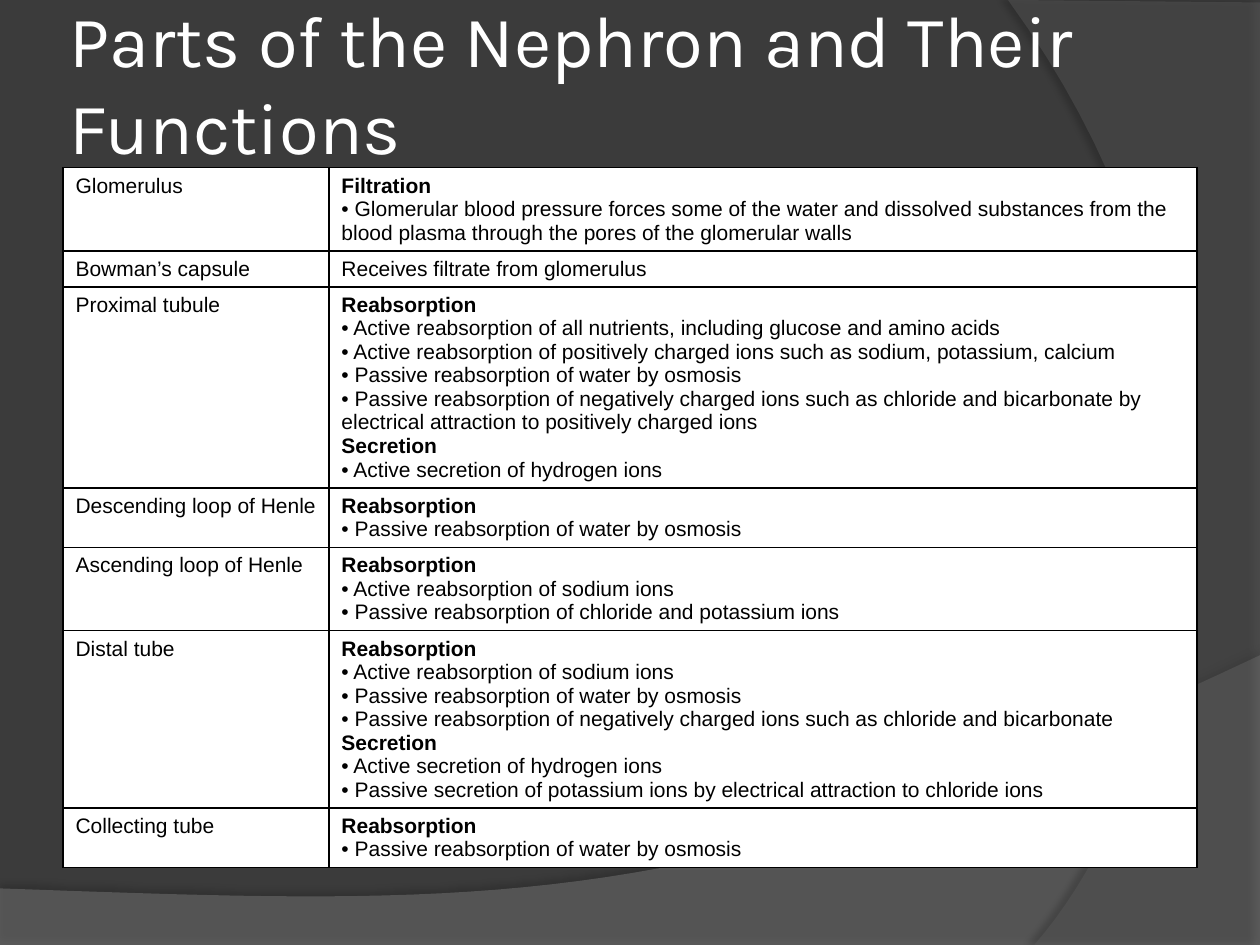
from dataclasses import dataclass

from lxml import etree
from pptx import Presentation
from pptx.dml.color import RGBColor
from pptx.enum.text import MSO_ANCHOR, MSO_AUTO_SIZE, PP_ALIGN
from pptx.oxml.ns import qn
from pptx.util import Cm, Pt

LEFT = PP_ALIGN.LEFT
MIDDLE = MSO_ANCHOR.MIDDLE
NO_AUTOFIT = MSO_AUTO_SIZE.NONE

BACKGROUND = RGBColor(0x3B, 0x3B, 0x3B)
WAVE_GREY = RGBColor(0x7F, 0x7F, 0x7F)
ARC_GREY = RGBColor(0x5E, 0x5E, 0x5E)
WHITE = RGBColor(0xFF, 0xFF, 0xFF)
BLACK = RGBColor(0x00, 0x00, 0x00)

TITLE_ONLY = 5
COLUMN_WIDTHS = (5.36, 17.5)
BULLET = "• "
CURVE_STEPS = 40

Point = tuple[float, float]


@dataclass
class Swoosh:
    """A translucent outline: straight corners, then one Bézier curve."""
    corners: list[Point]
    controls: tuple[Point, Point]
    end: Point
    color: RGBColor
    opacity: int
    shadow_opacity: int
    shadow_distance: float
    shadow_angle: int


@dataclass
class NephronPart:
    name: str
    height: float
    functions: list[str]


SWOOSHES = [
    Swoosh([(0, 17.91), (0, 19.05), (25.4, 19.05), (25.4, 13.21)],
           ((14.2, 18.52), (9.93, 18.26)), (0, 17.91), WAVE_GREY, 45, 35, 3.5, 270),
    Swoosh([(25.4, 0.05), (25.4, 19.05), (20.85, 19.05)],
           ((23.75, 15.72), (25.86, 7.62)), (20.32, 0), ARC_GREY, 40, 45, 4, 180),
]

# Lines that start with a bullet are plain; headings are bold
PARTS = [
    NephronPart("Glomerulus", 1.57, [
        "Filtration",
        "• Glomerular blood pressure forces some of the water and dissolved "
        "substances from the blood plasma through the pores of the glomerular walls"]),
    NephronPart("Bowman’s capsule", 0.69, ["Receives filtrate from glomerulus"]),
    NephronPart("Proximal tubule", 3.4, [
        "Reabsorption",
        "• Active reabsorption of all nutrients, including glucose and amino acids",
        "• Active reabsorption of positively charged ions such as sodium, potassium, calcium",
        "• Passive reabsorption of water by osmosis",
        "• Passive reabsorption of negatively charged ions such as chloride and "
        "bicarbonate by electrical attraction to positively charged ions",
        "Secretion",
        "• Active secretion of hydrogen ions"]),
    NephronPart("Descending loop of Henle", 1.14, [
        "Reabsorption",
        "• Passive reabsorption of water by osmosis"]),
    NephronPart("Ascending loop of Henle", 1.6, [
        "Reabsorption",
        "• Active reabsorption of sodium ions",
        "• Passive reabsorption of chloride and potassium ions"]),
    NephronPart("Distal tube", 3.4, [
        "Reabsorption",
        "• Active reabsorption of sodium ions",
        "• Passive reabsorption of water by osmosis",
        "• Passive reabsorption of negatively charged ions such as chloride and bicarbonate",
        "Secretion",
        "• Active secretion of hydrogen ions",
        "• Passive secretion of potassium ions by electrical attraction to chloride ions"]),
    NephronPart("Collecting tube", 1.14, [
        "Reabsorption",
        "• Passive reabsorption of water by osmosis"]),
]


def write_text(para, text: str, *, font: str = "Arial", size: float = 12,
               color: RGBColor = BLACK, bold: bool = False) -> None:
    para.alignment = LEFT
    span = para.add_run()
    span.text = text
    span.font.name = font
    span.font.size = Pt(size)
    span.font.color.rgb = color
    span.font.bold = bold


def curve_points(start: Point, swoosh: Swoosh) -> list[Point]:
    anchors = (start, *swoosh.controls, swoosh.end)
    points = []
    for step in range(1, CURVE_STEPS + 1):
        t = step / CURVE_STEPS
        weights = ((1 - t) ** 3, 3 * t * (1 - t) ** 2, 3 * t ** 2 * (1 - t), t ** 3)
        points.append(tuple(sum(w * anchor[axis] for w, anchor in zip(weights, anchors))
                            for axis in (0, 1)))
    return points


def add_alpha(color_element, percent: int) -> None:
    etree.SubElement(color_element, qn("a:alpha"), val=str(percent * 1000))


def draw_swoosh(page, swoosh: Swoosh) -> None:
    first, *rest = swoosh.corners
    outline = rest + curve_points(swoosh.corners[-1], swoosh)
    builder = page.shapes.build_freeform(Cm(first[0]), Cm(first[1]))
    builder.add_line_segments([(Cm(x), Cm(y)) for x, y in outline], close=True)
    shape = builder.convert_to_shape()
    shape.fill.solid()
    shape.fill.fore_color.rgb = swoosh.color
    shape.line.fill.background()
    shape.shadow.inherit = False
    properties = shape.element.spPr
    add_alpha(properties.find(qn("a:solidFill")).find(qn("a:srgbClr")), swoosh.opacity)
    shadow = etree.SubElement(
        properties.find(qn("a:effectLst")), qn("a:outerShdw"), blurRad=str(Pt(4)),
        dist=str(Pt(swoosh.shadow_distance)), dir=str(swoosh.shadow_angle * 60000))
    add_alpha(etree.SubElement(shadow, qn("a:srgbClr"), val=str(BLACK)),
              swoosh.shadow_opacity)


def draw_title(page, text: str) -> None:
    title = page.shapes.title
    title.left, title.top, title.width, title.height = Cm(1.27), Cm(0.76), Cm(22.86), Cm(1.78)
    frame = title.text_frame
    frame.auto_size = NO_AUTOFIT
    frame.word_wrap = True
    frame.vertical_anchor = MIDDLE
    frame.margin_left = frame.margin_right = Cm(0.13)
    frame.margin_top = frame.margin_bottom = Cm(0.13)
    write_text(frame.paragraphs[0], text, font="Karla", size=41.4, color=WHITE)
    page.shapes.element.append(title.element)  # bring in front of the swooshes


def fill_cell(cell, lines: list[str]) -> None:
    frame = cell.text_frame
    for index, line in enumerate(lines):
        para = frame.add_paragraph() if index else frame.paragraphs[0]
        write_text(para, line, bold=len(lines) > 1 and not line.startswith(BULLET))
    # Borders come before the fill in the cell's properties
    properties = cell._tc.get_or_add_tcPr()
    for side in ("a:lnL", "a:lnR", "a:lnT", "a:lnB"):
        border = etree.SubElement(properties, qn(side), w=str(Pt(1)))
        paint = etree.SubElement(border, qn("a:solidFill"))
        etree.SubElement(paint, qn("a:srgbClr"), val=str(BLACK))
    cell.fill.solid()
    cell.fill.fore_color.rgb = WHITE


def draw_table(page, parts: list[NephronPart]) -> None:
    height = sum(part.height for part in parts)
    table = page.shapes.add_table(len(parts), len(COLUMN_WIDTHS), Cm(1.27), Cm(3.38),
                                  Cm(sum(COLUMN_WIDTHS)), Cm(height)).table
    table.first_row = table.horz_banding = False
    for column, width in zip(table.columns, COLUMN_WIDTHS):
        column.width = Cm(width)
    for row, part in zip(table.rows, parts):
        row.height = Cm(part.height)
        fill_cell(row.cells[0], [part.name])
        fill_cell(row.cells[1], part.functions)


def main() -> None:
    deck = Presentation()
    deck.slide_width, deck.slide_height = Cm(25.4), Cm(19.05)
    page = deck.slides.add_slide(deck.slide_layouts[TITLE_ONLY])
    page.background.fill.solid()
    page.background.fill.fore_color.rgb = BACKGROUND
    for swoosh in SWOOSHES:
        draw_swoosh(page, swoosh)
    draw_title(page, "Parts of the Nephron and Their Functions")
    draw_table(page, PARTS)
    deck.save("out.pptx")


if __name__ == "__main__":
    main()
